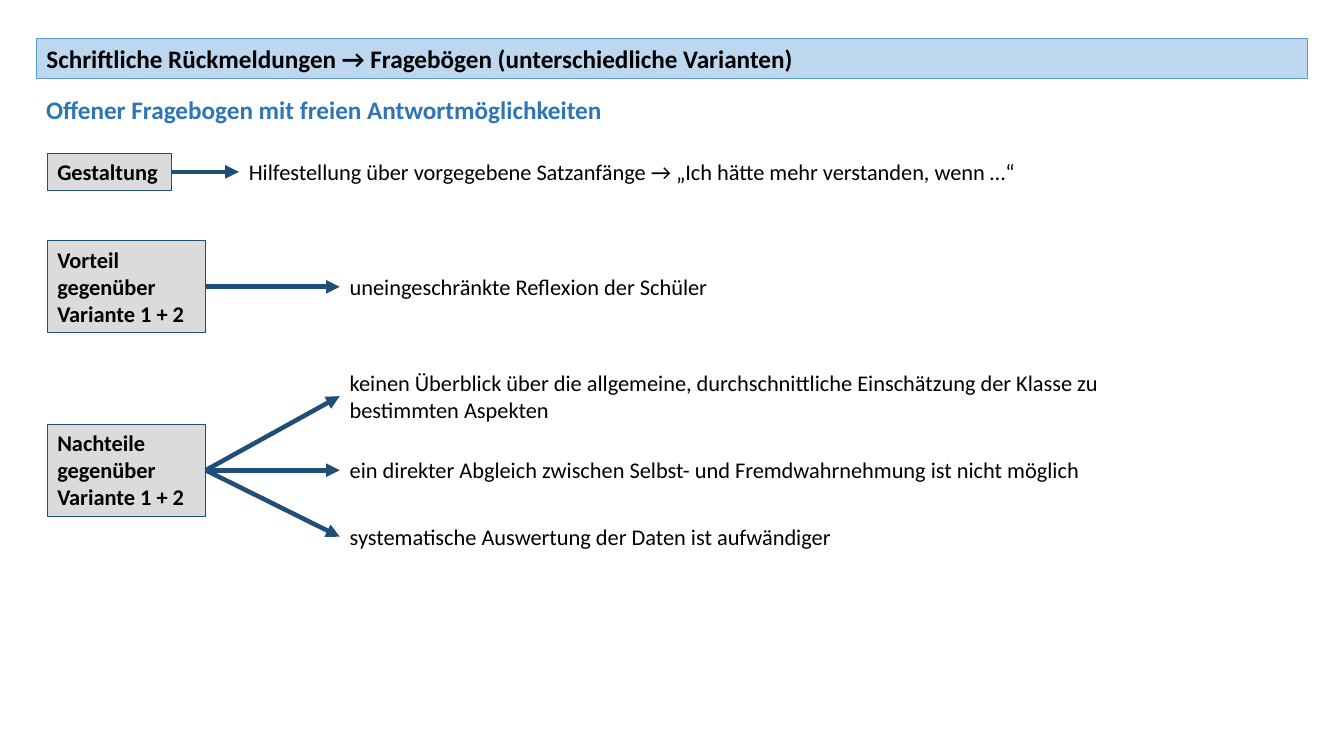
from dataclasses import dataclass

from lxml.etree import SubElement
from pptx import Presentation
from pptx.dml.color import RGBColor
from pptx.enum.shapes import MSO_CONNECTOR, MSO_SHAPE
from pptx.enum.text import MSO_ANCHOR, PP_ALIGN
from pptx.oxml.ns import qn
from pptx.shapes.base import BaseShape
from pptx.slide import Slide
from pptx.util import Emu, Inches, Pt

# Grid of 0.1 inch columns and rows
CELL = Inches(0.1)
BOX_LEFT = 4.7
TITLE_LEFT = 3.6
LINE_ROWS = 3.7

BLACK, DARK_BLUE, BLUE = "000000", "1F4E79", "2E75B6"
LIGHT_BLUE, TITLE_LINE, GREY = "BDD7EE", "5B9BD5", "DBDBDB"


@dataclass
class Area:
    column: float
    row: float
    columns: float
    rows: float = LINE_ROWS

    @property
    def right(self) -> float:
        return self.column + self.columns

    @property
    def middle(self) -> float:
        return self.row + self.rows / 2


@dataclass
class Statement:
    text: str
    area: Area


@dataclass
class Topic:
    label: str
    area: Area
    statements: list[Statement]


TOPICS = [
    Topic("Gestaltung", Area(BOX_LEFT, 15.2, 12.3), [
        Statement("Hilfestellung über vorgegebene Satzanfänge → "
                  "„Ich hätte mehr verstanden, wenn …“", Area(23.7, 15.2, 89.6)),
    ]),
    Topic("Vorteil gegenüber Variante 1 + 2", Area(BOX_LEFT, 23.9, 15.7, 9.1), [
        Statement("uneingeschränkte Reflexion der Schüler", Area(33.7, 26.6, 39.3)),
    ]),
    Topic("Nachteile gegenüber Variante 1 + 2", Area(BOX_LEFT, 42.1, 15.7, 9.1), [
        Statement("keinen Überblick über die allgemeine, durchschnittliche "
                  "Einschätzung der Klasse zu bestimmten Aspekten",
                  Area(33.7, 36.1, 84.7, 6.4)),
        Statement("ein direkter Abgleich zwischen Selbst- und Fremdwahrnehmung "
                  "ist nicht möglich", Area(33.7, 44.8, 79.6)),
        Statement("systematische Auswertung der Daten ist aufwändiger",
                  Area(33.7, 51.4, 53)),
    ]),
]


def color(value: str) -> RGBColor:
    return RGBColor.from_string(value)


def cells(count: float) -> Emu:
    return Emu(round(count * CELL))


def bounds(area: Area) -> list[Emu]:
    return [cells(count) for count in (area.column, area.row, area.columns, area.rows)]


def write(shape: BaseShape, text: str, size: int = 16,
          text_color: str = BLACK, bold: bool = False) -> None:
    frame = shape.text_frame
    frame.word_wrap = True
    frame.vertical_anchor = MSO_ANCHOR.TOP
    paragraph = frame.paragraphs[0]
    paragraph.alignment = PP_ALIGN.LEFT
    run = paragraph.add_run()
    run.text = text
    run.font.name = "Calibri"
    run.font.size = Pt(size)
    run.font.bold = bold
    run.font.color.rgb = color(text_color)


def paint(shape: BaseShape, fill: str, line: str) -> None:
    shape.fill.solid()
    shape.fill.fore_color.rgb = color(fill)
    shape.line.color.rgb = color(line)
    shape.line.width = Pt(0.75)


def add_title(slide: Slide, text: str, area: Area) -> None:
    title = slide.shapes.title
    title.left, title.top, title.width, title.height = bounds(area)
    paint(title, LIGHT_BLUE, TITLE_LINE)
    write(title, text, size=18, bold=True)


def add_text(slide: Slide, text: str, area: Area, size: int = 16,
             text_color: str = BLACK, bold: bool = False) -> None:
    write(slide.shapes.add_textbox(*bounds(area)), text, size, text_color, bold)


def add_label(slide: Slide, text: str, area: Area) -> None:
    shape = slide.shapes.add_shape(MSO_SHAPE.RECTANGLE, *bounds(area))
    shape.shadow.inherit = False
    paint(shape, GREY, DARK_BLUE)
    write(shape, text, bold=True)


def add_arrow(slide: Slide, source: Area, target: Area) -> None:
    arrow = slide.shapes.add_connector(
        MSO_CONNECTOR.STRAIGHT, cells(source.right), cells(source.middle),
        cells(target.column), cells(target.middle))
    arrow.line.color.rgb = color(DARK_BLUE)
    arrow.line.width = Pt(3.25)
    SubElement(arrow.line._get_or_add_ln(), qn("a:tailEnd"), type="triangle")
    SubElement(arrow._element.spPr, qn("a:effectLst"))


def main() -> None:
    presentation = Presentation()
    presentation.slide_width = Inches(13.33)
    presentation.slide_height = Inches(7.5)
    slide = presentation.slides.add_slide(presentation.slide_layouts[5])

    # Heading
    add_title(slide, "Schriftliche Rückmeldungen → Fragebögen "
              "(unterschiedliche Varianten)", Area(TITLE_LEFT, 3.8, 126.1, 4))
    add_text(slide, "Offener Fragebogen mit freien Antwortmöglichkeiten",
             Area(TITLE_LEFT, 8.9, 111, 4), size=18, text_color=BLUE, bold=True)

    # Topics with arrows to their statements
    for topic in TOPICS:
        add_label(slide, topic.label, topic.area)
        for statement in topic.statements:
            add_text(slide, statement.text, statement.area)
            add_arrow(slide, topic.area, statement.area)

    presentation.save("out.pptx")


if __name__ == "__main__":
    main()
